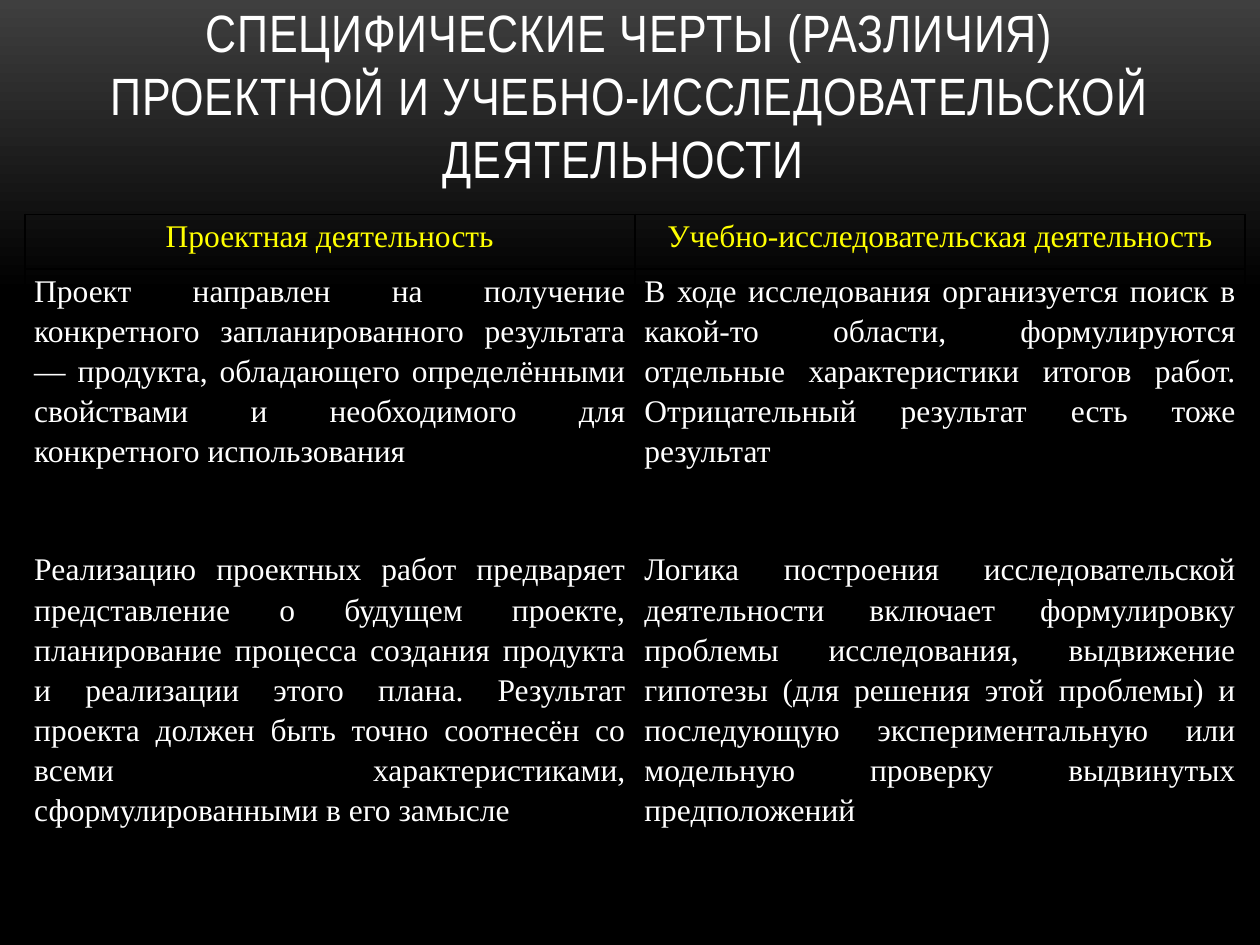
from dataclasses import dataclass

from lxml import etree
from pptx import Presentation
from pptx.dml.color import RGBColor
from pptx.enum.text import MSO_ANCHOR, PP_ALIGN
from pptx.oxml.ns import qn
from pptx.util import Cm, Pt

CENTER = PP_ALIGN.CENTER
JUSTIFY = PP_ALIGN.JUSTIFY
BOTTOM = MSO_ANCHOR.BOTTOM
TOP = MSO_ANCHOR.TOP

HUES = {"top": "3F3F3F", "base": "000000", "head": "FFFF00", "text": "FFFFFF"}
EDGES = ("a:lnL", "a:lnR", "a:lnT", "a:lnB")
TITLE = ("СПЕЦИФИЧЕСКИЕ ЧЕРТЫ (РАЗЛИЧИЯ) ПРОЕКТНОЙ "
         "И УЧЕБНО-ИССЛЕДОВАТЕЛЬСКОЙ ДЕЯТЕЛЬНОСТИ ")


@dataclass
class Style:
    face: str
    size: float
    hue: str
    align: PP_ALIGN
    para: dict


@dataclass
class Row:
    height: float
    style: Style
    texts: tuple


SPACE = {"line_spacing": 1.15, "space_after": Pt(10)}
HEADING = Style("Arial Narrow", 30, "text", CENTER, {})
HEAD = Style("Times New Roman", 18, "head", CENTER, SPACE)
BODY = Style("Times New Roman", 18, "text", JUSTIFY, SPACE)

ROWS = (
    Row(1.1, HEAD, (
        "Проектная деятельность",
        "Учебно-исследовательская деятельность")),
    Row(5.62, BODY, (
        "Проект направлен на получение конкретного запланированного "
        "результата — продукта, обладающего определёнными свойствами и "
        "необходимого для конкретного использования",
        "В ходе исследования организуется поиск в какой-то области, "
        "формулируются отдельные характеристики итогов работ. "
        "Отрицательный результат есть тоже результат")),
    Row(7.68, BODY, (
        "Реализацию проектных работ предваряет представление о будущем "
        "проекте, планирование процесса создания продукта и реализации "
        "этого плана. Результат проекта должен быть точно соотнесён со "
        "всеми характеристиками, сформулированными в его замысле",
        "Логика построения исследовательской деятельности включает "
        "формулировку проблемы исследования, выдвижение гипотезы (для "
        "решения этой проблемы) и последующую экспериментальную или "
        "модельную проверку выдвинутых предположений")),
)


def apply(item, values: dict) -> None:
    for name, value in values.items():
        setattr(item, name, value)


def color(name: str) -> RGBColor:
    return RGBColor.from_string(HUES[name])


def write(frame, text: str, style: Style):
    para = frame.paragraphs[0]
    apply(para, {"alignment": style.align, **style.para})
    run = para.add_run()
    run.text = text
    apply(run.font, {"name": style.face, "size": Pt(style.size), "bold": False})
    run.font.color.rgb = color(style.hue)
    return run


def border(cell) -> None:
    props = cell._tc.get_or_add_tcPr()
    for edge in EDGES:
        line = etree.SubElement(props, qn(edge), w=str(Pt(1)))
        fill = etree.SubElement(line, qn("a:solidFill"))
        etree.SubElement(fill, qn("a:srgbClr"), val=HUES["base"])


def paint(slide) -> None:
    fill = slide.background.fill
    fill.gradient()
    fill.gradient_angle = 270
    for stop, name, place in zip(fill.gradient_stops, ("top", "base"), (0, 0.31)):
        stop.color.rgb = color(name)
        stop.position = place


def add_title(slide) -> None:
    box = slide.shapes.add_textbox(Cm(1.7), Cm(0.76), Cm(22), Cm(3.18))
    apply(box.text_frame, {"word_wrap": True, "vertical_anchor": BOTTOM})
    run = write(box.text_frame, TITLE, HEADING)
    run.font._element.set("spc", "50")


def add_grid(slide) -> None:
    total = sum(row.height for row in ROWS)
    table = slide.shapes.add_table(
        len(ROWS), 2, Cm(0.5), Cm(4.32), Cm(24.6), Cm(total)).table
    apply(table, {"first_row": False, "horz_banding": False})
    for line, row in zip(table.rows, ROWS):
        line.height = Cm(row.height)
        for cell, text in zip(line.cells, row.texts):
            apply(cell, {"margin_left": Cm(0.19), "margin_right": Cm(0.19),
                         "margin_top": 0, "margin_bottom": 0,
                         "vertical_anchor": TOP})
            border(cell)
            cell.fill.background()
            write(cell.text_frame, text, row.style)


def main() -> None:
    deck = Presentation()
    apply(deck, {"slide_width": Cm(25.4), "slide_height": Cm(19.05)})
    slide = deck.slides.add_slide(deck.slide_layouts[6])
    paint(slide)
    add_title(slide)
    add_grid(slide)
    deck.save("out.pptx")


if __name__ == "__main__":
    main()
